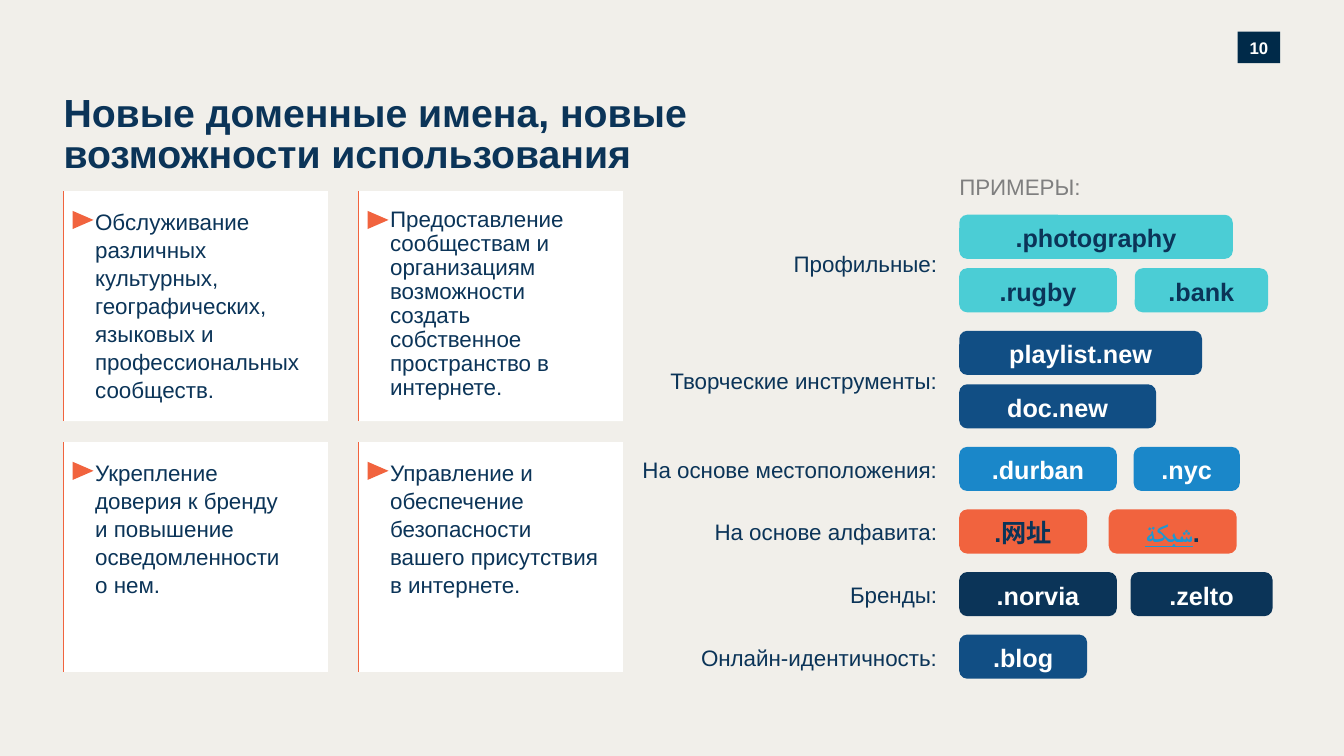
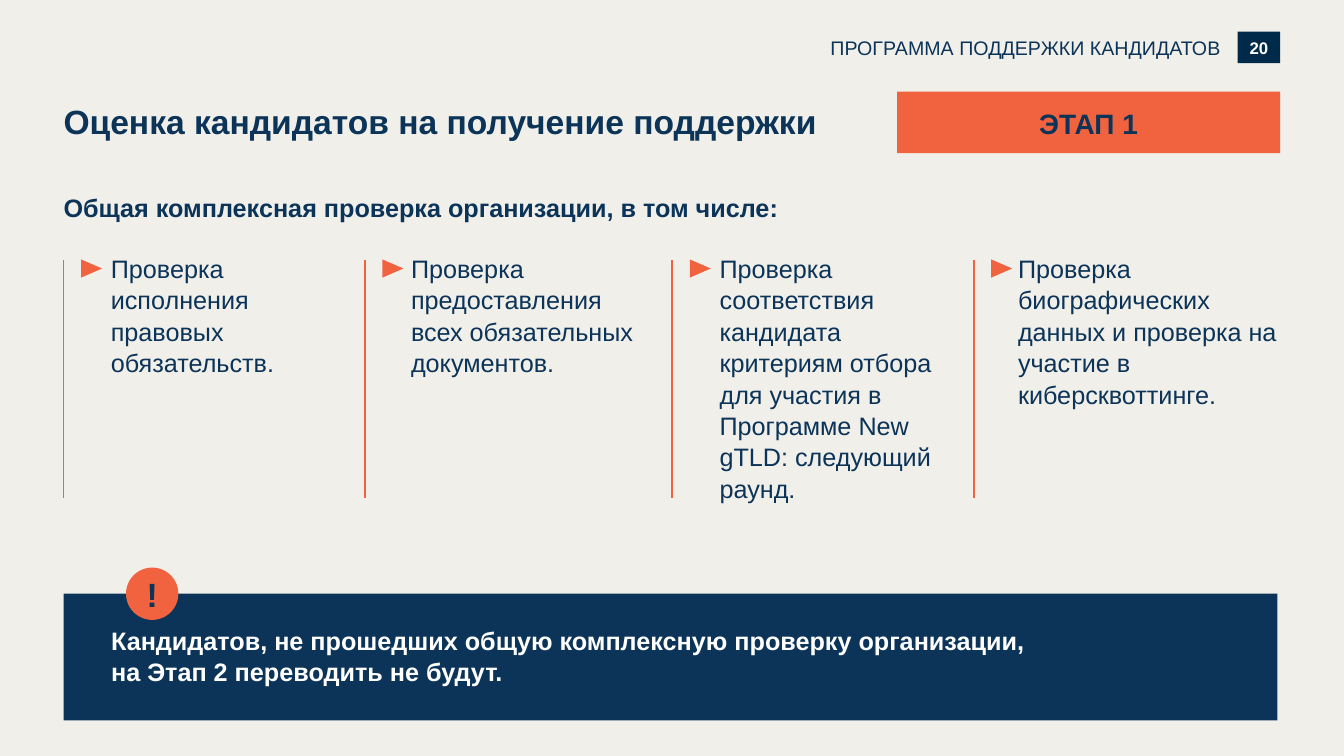
from lxml import etree
from pptx import Presentation
from pptx.dml.color import RGBColor
from pptx.enum import shapes as sh, text as tx
from pptx.oxml import ns
from pptx.util import Pt

SAND, NAVY, INK, WHITE = "F1EFEA", "0B3458", "002A49", "FFFFFF"
CORAL, TEAL, SKY, BLUE = "F1633E", "4BCDD5", "1A87C9", "114E84"
GREY, LINK = "7F7F7F", "1D98D3"
FACE = "Arial"
LEFT, RIGHT = 45.4, 914.4
LINE = 1.04  # shared line spacing
SHAPE, ALIGN, ANCHOR = sh.MSO_SHAPE, tx.PP_ALIGN, tx.MSO_ANCHOR


# Basics
def tint(code):
    return RGBColor.from_string(code)


def run(text, size=16, code=NAVY, bold=False, under=False):
    return text, size, code, bold, under


def write(frame, paras, align=ALIGN.LEFT, anchor=ANCHOR.TOP,
          pads=(0, 0, 0, 0), lead=LINE):
    """Fill a frame; each paragraph is a list of runs."""
    frame.word_wrap = True
    frame.auto_size = tx.MSO_AUTO_SIZE.NONE
    frame.vertical_anchor = anchor
    (frame.margin_left, frame.margin_top,
     frame.margin_right, frame.margin_bottom) = [Pt(p) for p in pads]
    for i, runs in enumerate(paras):
        para = frame.add_paragraph() if i else frame.paragraphs[0]
        para.alignment = align
        para.line_spacing = lead
        for text, size, code, bold, under in runs:
            part = para.add_run()
            part.text = text
            font = part.font
            font.name, font.size = FACE, Pt(size)
            font.bold, font.underline = bold, under
            font.color.rgb = tint(code)


def place(box):
    return [Pt(v) for v in box]


def label(slide, box, runs, **style):
    frame = slide.shapes.add_textbox(*place(box)).text_frame
    write(frame, [runs], **style)


def block(slide, kind, box, code, paras=(), **style):
    shape = slide.shapes.add_shape(kind, *place(box))
    shape.shadow.inherit = False
    shape.fill.solid()
    shape.fill.fore_color.rgb = tint(code)
    shape.line.fill.background()
    if paras:
        write(shape.text_frame, paras, **style)
    return shape


def rule(slide, x, top, high):
    line = slide.shapes.add_connector(
        sh.MSO_CONNECTOR.STRAIGHT, *place((x, top, x, top + high)))
    line.line.color.rgb = tint(CORAL)
    line.line.width = Pt(1.25)
    etree.SubElement(line._element.spPr, ns.qn("a:effectLst"))


def arrow(slide, x, y):
    block(slide, SHAPE.ISOSCELES_TRIANGLE, (x, y, 13, 15), CORAL).rotation = 90


# Shared page: number tag and title
def page(deck, number, title, box, size, lead=LINE):
    slide = deck.slides.add_slide(deck.slide_layouts[5])
    block(slide, SHAPE.RECTANGLE, (884, 22.6, RIGHT - 884, 22.6), INK,
          [[run(number, 12, WHITE, True)]],
          align=ALIGN.CENTER, anchor=ANCHOR.MIDDLE)
    head = slide.shapes.title
    head.left, head.top, head.width, head.height = place(box)
    write(head.text_frame, [[run(title, size, NAVY, True)]], lead=lead)
    return slide


# Domain slide
CARDS = [
    ("Обслуживание различных культурных, географических, языковых и "
     "профессиональных сообществ.", 17, LINE),
    ("Предоставление сообществам и организациям возможности создать "
     "собственное пространство в интернете.", 14.4, Pt(17.2)),
    ("Укрепление доверия к бренду и повышение осведомленности о нем.",
     28, LINE),
    ("Управление и обеспечение безопасности вашего присутствия "
     "в интернете.", 14.4, LINE),
]
# Label, fill, text colour, then rows of (runs or name, left, width)
GROUPS = [
    ("Профильные:", TEAL, NAVY,
     [[(".photography", 0, 195.4)],
      [(".rugby", 0, 112.6), (".bank", 125.4, 95.2)]]),
    ("Творческие инструменты:", BLUE, WHITE,
     [[("playlist.new", 0, 173.4)], [("doc.new", 0, 140.6)]]),
    ("На основе местоположения:", SKY, WHITE,
     [[(".durban", 0, 112.6), (".nyc", 124.6, 75.8)]]),
    ("На основе алфавита:", CORAL, NAVY,
     [[(".网址", 0, 91.4),
       ([run("شبكة", 18, LINK, True, True), run(".", 18, NAVY, True)],
        106.8, 91.4)]]),
    ("Бренды:", NAVY, WHITE,
     [[(".norvia", 0, 112.6), (".zelto", 122.4, 101.4)]]),
    ("Онлайн-идентичность:", BLUE, WHITE, [[(".blog", 0, 91.4)]]),
]


def card(slide, box, text, pad, lead):
    x, y, _, high = box
    block(slide, SHAPE.RECTANGLE, box, WHITE, [[run(text)]],
          pads=(22.6, 11.6, pad, 14.4), lead=lead)
    arrow(slide, x + 7.4, y + 13)
    rule(slide, x, y, high)


def cards(slide, x, y):
    for i, (text, pad, lead) in enumerate(CARDS):
        row, col = divmod(i, 2)
        card(slide, (x + col * 210.7, y + row * 179.2, 188.8, 164.2),
             text, pad, lead)


def pill(slide, box, name, code, ink):
    runs = [run(name, 18, ink, True)] if isinstance(name, str) else name
    shape = block(slide, SHAPE.ROUNDED_RECTANGLE, box, code, [runs],
                  align=ALIGN.CENTER, anchor=ANCHOR.MIDDLE, lead=1.06)
    shape.adjustments[0] = 0.18


def samples(slide, x, y):
    high, step, gap = 31.5, 38.2, 6.5
    label(slide, (x, y - 30.4, 237, 19.2), [run("ПРИМЕРЫ:", 16, GREY)])
    for name, code, ink, rows in GROUPS:
        span = step * (len(rows) - 1) + high
        label(slide, (x - 240.4, y + span / 2 - 10, 224.6, 19.2),
              [run(name)], align=ALIGN.RIGHT)
        for row in rows:
            for text, left, wide in row:
                pill(slide, (x + left, y, wide, high), text, code, ink)
            y += step
        y += gap


def domains(deck):
    slide = page(deck, "10",
                 "Новые доменные имена, новые возможности использования",
                 (LEFT, 67, 553, 40.3), 28, Pt(29.6))
    cards(slide, LEFT, 136.6)
    samples(slide, 685.2, 153.4)


# Review slide
CHECKS = [
    (LEFT, 33.8, 163, "Проверка исполнения правовых обязательств."),
    (260.6, 33, 168.5,
     "Проверка предоставления всех обязательных документов."),
    (480.2, 33.8, 168.5,
     "Проверка соответствия кандидата критериям отбора для участия "
     "в Программе New gTLD: следующий раунд."),
    (695.5, 31.7, 186,
     "Проверка биографических данных и проверка на участие "
     "в киберсквоттинге."),
]


def check(slide, box, inset, text):
    x, y, wide, high = box
    rule(slide, x, y, high)
    arrow(slide, x + 13.5, y - 1.5)
    label(slide, (x + inset, y - 5.8, wide, high + 12), [run(text, 18)])


def notice(slide, box, lines):
    x, y = box[:2]
    block(slide, SHAPE.RECTANGLE, box, NAVY,
          [[run(line, 18, WHITE, True)] for line in lines],
          pads=(34, 21.6, 48, 21.6))
    block(slide, SHAPE.OVAL, (x + 44.6, y - 18.7, 37.4, 37.4), CORAL,
          [[run("!", 24, NAVY, True)]],
          align=ALIGN.CENTER, anchor=ANCHOR.MIDDLE)


def review(deck):
    slide = page(deck, "20", "Оценка кандидатов на получение поддержки",
                 (LEFT, 70.6, 564.5, 39.6), 24)
    label(slide, (524, 25.2, 348, 17.3),
          [run("ПРОГРАММА ПОДДЕРЖКИ КАНДИДАТОВ", 14)], align=ALIGN.RIGHT)
    block(slide, SHAPE.RECTANGLE, (640.8, 65.5, RIGHT - 640.8, 44), CORAL,
          [[run("ЭТАП 1", 20, NAVY, True)]],
          align=ALIGN.CENTER, anchor=ANCHOR.MIDDLE)
    label(slide, (LEFT, 136.8, 564.5, 29.5),
          [run("Общая комплексная проверка организации, в том числе:",
               18, NAVY, True)])
    for x, inset, wide, text in CHECKS:
        check(slide, (x, 185.8, wide, 170), inset, text)
    notice(slide, (LEFT, 424.1, 867, 90.6),
           ["Кандидатов, не прошедших общую комплексную проверку "
            "организации,", "на Этап 2 переводить не будут."])


def main():
    deck = Presentation()
    deck.slide_width, deck.slide_height = Pt(960), Pt(540)
    fill = deck.slide_master.background.fill
    fill.solid()
    fill.fore_color.rgb = tint(SAND)
    domains(deck)
    review(deck)
    deck.save("out.pptx")


if __name__ == "__main__":
    main()
